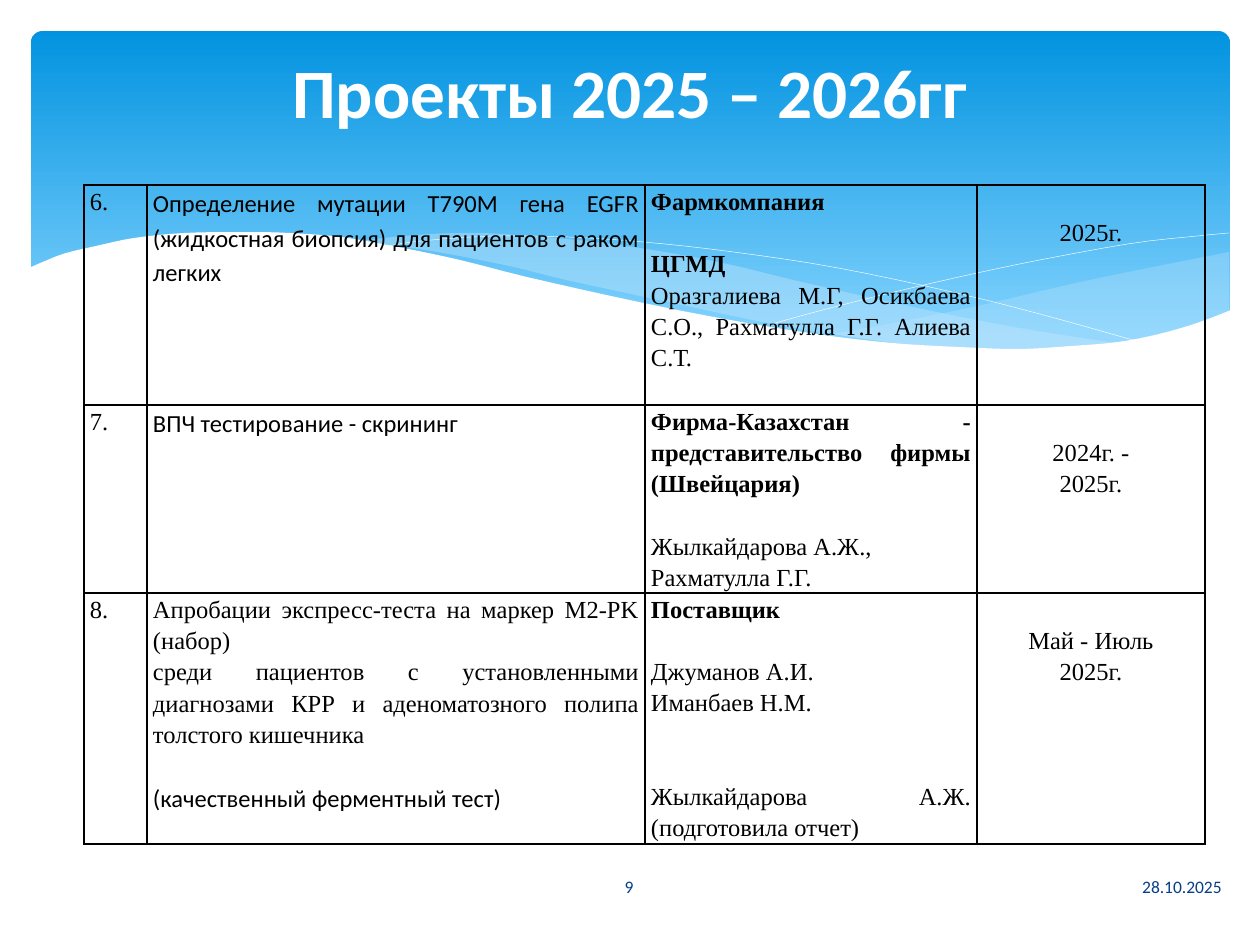
from typing import NamedTuple

from lxml import etree
from pptx import Presentation
from pptx.dml.color import RGBColor
from pptx.enum.shapes import MSO_SHAPE
from pptx.enum.text import MSO_ANCHOR, PP_ALIGN
from pptx.oxml.ns import qn
from pptx.util import Emu, Pt

PX = 914400 / 126
ROUNDED = MSO_SHAPE.ROUNDED_RECTANGLE
MIDDLE = MSO_ANCHOR.MIDDLE
CENTER, RIGHT, JUSTIFY = PP_ALIGN.CENTER, PP_ALIGN.RIGHT, PP_ALIGN.JUSTIFY

WHITE = RGBColor(0xFF, 0xFF, 0xFF)
BLACK = RGBColor(0, 0, 0)
SKY_TOP = RGBColor(0x02, 0x93, 0xE0)
SKY_BOTTOM = RGBColor(0x83, 0xD3, 0xFE)
MIST = RGBColor(0xC6, 0xE7, 0xFC)
NAVY = RGBColor(0x07, 0x3E, 0x87)

SANS, SERIF = "Calibri", "Times New Roman"
LINE_GAP = 31
CURVE_STEPS = 4


class Entry(NamedTuple):
    text: str
    font: str = SERIF
    bold: bool = False
    gap: int = 0


COLUMNS = [63, 498, 332, 228]
ROWS = [
    (220, "6.",
     [Entry("Определение мутации T790M гена EGFR (жидкостная биопсия) для пациентов с раком легких", SANS)],
     [Entry("Фармкомпания", bold=True),
      Entry("ЦГМД", bold=True, gap=1),
      Entry("Оразгалиева М.Г, Осикбаева С.О., Рахматулла Г.Г. Алиева С.Т.")],
     ["2025г."]),
    (188, "7.",
     [Entry("ВПЧ тестирование - скрининг", SANS)],
     [Entry("Фирма-Казахстан - представительство фирмы (Швейцария)", bold=True),
      Entry("Жылкайдарова А.Ж.,", gap=1),
      Entry("Рахматулла Г.Г.")],
     ["2024г. -", "2025г."]),
    (251, "8.",
     [Entry("Апробации экспресс-теста на маркер M2-PK (набор)"),
      Entry("среди пациентов с установленными диагнозами КРР и аденоматозного полипа толстого кишечника"),
      Entry("(качественный ферментный тест)", SANS, gap=1)],
     [Entry("Поставщик", bold=True),
      Entry("Джуманов А.И.", gap=1),
      Entry("Иманбаев Н.М."),
      Entry("Жылкайдарова А.Ж. (подготовила отчет)", gap=2)],
     ["Май - Июль", "2025г."]),
]

RIGHT_WAVE = [
    [(1229, 252), (1085, 281), (982, 305), (889, 324), (833, 334)],
    [(833, 334), (888, 342), (954, 348), (1026, 350), (1098, 346), (1160, 336), (1199, 324), (1229, 311)],
]
MIDDLE_WAVE = [
    [(1125, 344), (1055, 334), (976, 320), (890, 302), (793, 280), (736, 266), (682, 255), (632, 247),
     (586, 241), (529, 236), (479, 233), (433, 234), (394, 237), (360, 241)],
    [(360, 241), (431, 251), (509, 266), (566, 280), (668, 302), (757, 321), (838, 335), (910, 345),
     (989, 350), (1056, 350), (1125, 344)],
]
FALLING_LINE = [[(389, 246), (413, 242), (457, 238), (505, 236), (567, 237), (643, 242), (733, 252),
                 (838, 268), (956, 293), (1047, 316), (1143, 343)]]
RISING_LINE = [[(772, 324), (823, 310), (907, 289), (1015, 265), (1128, 244), (1198, 236), (1229, 233)]]
WHITE_WAVE = [
    [(1231, 310), (1197, 323), (1159, 334), (1118, 342), (1071, 346), (1019, 349), (959, 347), (892, 343),
     (816, 334), (730, 320), (634, 301), (527, 277), (460, 260), (398, 247), (341, 237), (290, 233),
     (243, 232), (184, 233), (134, 238), (96, 246), (66, 253), (45, 261), (29, 268)],
    [(29, 415), (1231, 415)],
]


def px(length):
    return Emu(round(length * PX))


def smooth(knots):
    padded = [knots[0], *knots, knots[-1]]
    points = [knots[0]]
    for a, b, c, d in zip(padded, padded[1:], padded[2:], padded[3:]):
        for step in range(1, CURVE_STEPS + 1):
            t = step / CURVE_STEPS
            points.append(tuple(
                (2 * q + (r - p) * t + (2 * p - 5 * q + 4 * r - s) * t ** 2
                 + (3 * q - p - 3 * r + s) * t ** 3) / 2
                for p, q, r, s in zip(a, b, c, d)))
    return points


def draw_curves(page, curves, fill=None, opacity=100):
    points = [(px(x), px(y)) for curve in curves for x, y in smooth(curve)]
    builder = page.shapes.build_freeform(*points[0])
    builder.add_line_segments(points[1:], close=fill is not None)
    shape = builder.convert_to_shape()
    shape.shadow.inherit = False
    if fill is None:
        shape.fill.background()
        shape.line.color.rgb = WHITE
        shape.line.width = Pt(0.25)
        return
    shape.fill.solid()
    shape.fill.fore_color.rgb = fill
    shape.line.fill.background()
    if opacity < 100:
        color = shape.fill._xPr.find(f".//{qn('a:srgbClr')}")
        etree.SubElement(color, qn("a:alpha"), val=str(opacity * 1000))


def add_backdrop(page, left, top, width, height):
    panel = page.shapes.add_shape(ROUNDED, px(left), px(top), px(width), px(height))
    panel.adjustments[0] = 0.034
    panel.shadow.inherit = False
    panel.line.fill.background()
    panel.fill.gradient()
    panel.fill.gradient_angle = 270
    for stop, position, color in zip(panel.fill.gradient_stops, (0, 0.9), (SKY_TOP, SKY_BOTTOM)):
        stop.position = position
        stop.color.rgb = color
    draw_curves(page, RIGHT_WAVE, MIST, 29)
    draw_curves(page, MIDDLE_WAVE, MIST, 40)
    draw_curves(page, FALLING_LINE)
    draw_curves(page, RISING_LINE)
    draw_curves(page, WHITE_WAVE, WHITE)


def add_label(page, left, top, width, height, text, size, color, align, bold=False):
    box = page.shapes.add_textbox(px(left), px(top), px(width), px(height))
    frame = box.text_frame
    frame.word_wrap = True
    frame.vertical_anchor = MIDDLE
    para = frame.paragraphs[0]
    para.text = text
    para.alignment = align
    font = para.font
    font.name, font.size, font.bold, font.color.rgb = SANS, Pt(size), bold, color


def add_borders(cell):
    properties = cell._tc.get_or_add_tcPr()
    for side in ("lnL", "lnR", "lnT", "lnB"):
        border = etree.SubElement(properties, qn(f"a:{side}"), w=str(Pt(1)))
        fill = etree.SubElement(border, qn("a:solidFill"))
        etree.SubElement(fill, qn("a:srgbClr"), val=str(BLACK))


def fill_cell(cell, entries, align, top_gap=0):
    add_borders(cell)
    cell.fill.background()
    cell.margin_left = cell.margin_right = px(6)
    cell.margin_top, cell.margin_bottom = px(top_gap), 0
    frame = cell.text_frame
    for index, entry in enumerate(entries):
        para = frame.add_paragraph() if index else frame.paragraphs[0]
        para.text = entry.text
        para.alignment = align
        para.line_spacing = 1.15
        para.space_before = px(entry.gap * LINE_GAP)
        font = para.font
        font.name, font.size, font.bold, font.color.rgb = entry.font, Pt(14), entry.bold, BLACK


def add_projects(page, left, top):
    height = sum(row[0] for row in ROWS)
    frame = page.shapes.add_table(len(ROWS), len(COLUMNS), px(left), px(top), px(sum(COLUMNS)), px(height))
    table = frame.table
    table.first_row = table.horz_banding = False
    for column, width in zip(table.columns, COLUMNS):
        column.width = px(width)
    for index, (row_height, number, topic, partners, dates) in enumerate(ROWS):
        row = table.rows[index]
        row.height = px(row_height)
        number_cell, topic_cell, partner_cell, date_cell = row.cells
        fill_cell(number_cell, [Entry(number)], JUSTIFY)
        fill_cell(topic_cell, topic, JUSTIFY)
        fill_cell(partner_cell, partners, JUSTIFY)
        fill_cell(date_cell, [Entry(date) for date in dates], CENTER, LINE_GAP)


def main():
    deck = Presentation()
    deck.slide_width, deck.slide_height = px(1260), px(945)
    page = deck.slides.add_slide(deck.slide_layouts[6])
    add_backdrop(page, 31, 31, 1199, 340)
    add_projects(page, 84, 185)
    add_label(page, 712, 862, 522, 50, "28.10.2025", 10, NAVY, RIGHT)
    add_label(page, 549, 862, 160, 50, "9", 10, NAVY, CENTER)
    add_label(page, 63, 47, 1134, 88, "Проекты 2025 – 2026гг", 39.6, WHITE, CENTER, bold=True)
    deck.save("out.pptx")


if __name__ == "__main__":
    main()
